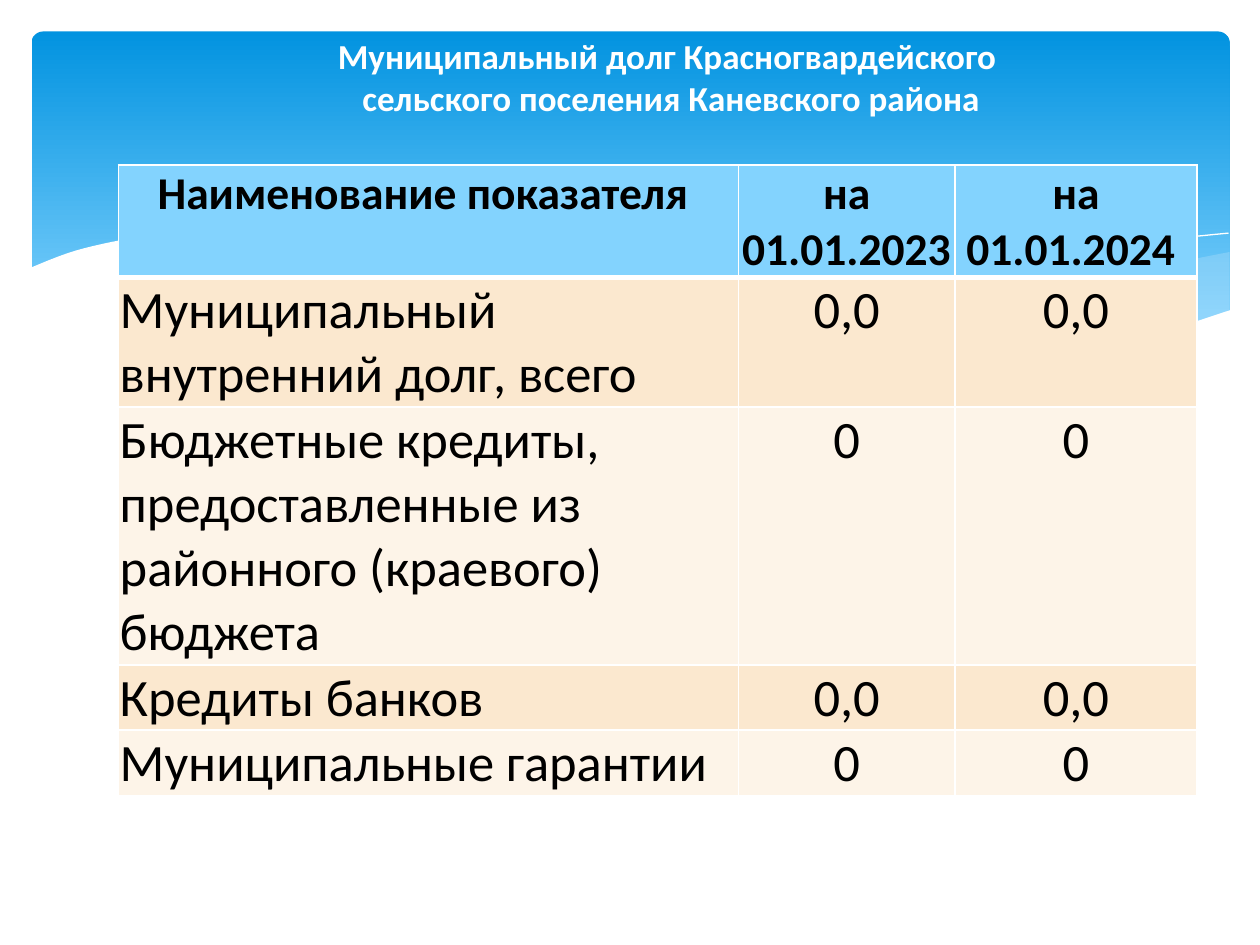
"""Build the slide on the municipal debt of the Krasnogvardeyskoye settlement."""
import lxml.etree
import pptx
import pptx.dml.color
import pptx.enum.shapes
import pptx.enum.text
import pptx.oxml.ns
import pptx.util

Inches = pptx.util.Inches
Pt = pptx.util.Pt
qn = pptx.oxml.ns.qn
CENTER = pptx.enum.text.PP_ALIGN.CENTER
COLORS = {
    "sky": "0293E0", "light_sky": "83D3FE", "wave": "C6E7FC", "white": "FFFFFF",
    "black": "000000", "peach": "FBE8CF", "cream": "FDF4E8",
}
FONT = "Calibri"
TITLE_SIZE, HEADER_SIZE, BODY_SIZE = 20, 26, 30
LINE_SPACING = 1.22
CELL_MARGIN = 0.01
THIN_BORDER, THICK_BORDER = 1, 3
CURVE_STEPS = 8


def rgb(name):
    """Return the named palette colour."""
    return pptx.dml.color.RGBColor.from_string(COLORS[name])


def smooth_curve(knots):
    """Return points of a Catmull-Rom spline that passes through the knots."""
    padded = [knots[0], *knots, knots[-1]]
    points = [knots[0]]
    for before, start, end, after in zip(padded, padded[1:], padded[2:], padded[3:]):
        for step in range(1, CURVE_STEPS + 1):
            t = step / CURVE_STEPS
            points.append(tuple(
                b + ((c - a) * t + (2 * a - 5 * b + 4 * c - d) * t ** 2
                     + (3 * b - a - 3 * c + d) * t ** 3) / 2
                for a, b, c, d in zip(before, start, end, after)))
    return points


presentation = pptx.Presentation()
presentation.slide_width = Inches(10)
presentation.slide_height = Inches(7.5)
slide = presentation.slides.add_slide(presentation.slide_layouts[5])
shapes = slide.shapes

banner = shapes.add_shape(
    pptx.enum.shapes.MSO_SHAPE.ROUNDED_RECTANGLE,
    Inches(0.25), Inches(0.25), Inches(9.51), Inches(2.7))
banner.adjustments[0] = 0.034
banner.shadow.inherit = False
banner.line.fill.background()
banner.fill.gradient()
banner.fill.gradient_angle = 270
for stop, color, position in zip(banner.fill.gradient_stops, ("sky", "light_sky"), (0, 0.9)):
    stop.color.rgb = rgb(color)
    stop.position = position

right_wave_top = [(9.76, 2), (8.61, 2.23), (7.53, 2.48), (6.61, 2.65)]
right_wave_bottom = [(6.61, 2.65), (7.32, 2.74), (8.14, 2.78), (8.97, 2.7), (9.76, 2.47)]
middle_wave_top = [
    (8.93, 2.73), (7.75, 2.54), (6.29, 2.22), (5.28, 2), (4.2, 1.87), (3.44, 1.86), (2.86, 1.91)]
middle_wave_bottom = [
    (2.86, 1.91), (3.83, 2.07), (4.91, 2.32), (6.01, 2.55), (7.09, 2.72), (8.07, 2.78), (8.93, 2.73)]
long_crest = [(3.09, 1.95), (4.01, 1.87), (5.1, 1.92), (6.36, 2.08), (7.6, 2.33), (9.07, 2.72)]
right_crest = [(6.13, 2.57), (7.2, 2.29), (8.36, 2.04), (9.1, 1.92), (9.75, 1.85)]
white_wave_top = [
    (9.77, 2.46), (8.99, 2.69), (8.09, 2.77), (7.08, 2.7), (5.79, 2.5), (4.47, 2.2),
    (3.4, 1.97), (2.3, 1.85), (1.32, 1.86), (0.67, 1.97), (0.23, 2.13)]
white_wave_base = [(0.23, 3.29), (9.77, 3.29)]

filled_waves = [
    ([right_wave_top, right_wave_bottom], "wave", 29),
    ([middle_wave_top, middle_wave_bottom], "wave", 40),
]
crest_lines = [([long_crest], None, 100), ([right_crest], None, 100)]
front_wave = [([white_wave_top, white_wave_base], "white", 100)]
for edges, fill_name, opacity in filled_waves + crest_lines + front_wave:
    outline = [(Inches(x), Inches(y)) for edge in edges for x, y in smooth_curve(edge)]
    builder = shapes.build_freeform(*outline[0])
    builder.add_line_segments(outline[1:], close=fill_name is not None)
    wave = builder.convert_to_shape()
    wave.shadow.inherit = False
    if fill_name is None:
        wave.fill.background()
        wave.line.color.rgb = rgb("white")
        wave.line.width = Pt(0)
        continue
    wave.line.fill.background()
    wave.fill.solid()
    wave.fill.fore_color.rgb = rgb(fill_name)
    if opacity < 100:
        fill_color = wave.element.spPr.find(".//" + qn("a:srgbClr"))
        lxml.etree.SubElement(fill_color, qn("a:alpha"), val=str(opacity * 1000))

header = ("Наименование показателя ", "на 01.01.2023 ", "на 01.01.2024 ")
debt_rows = [
    ("Муниципальный внутренний долг, всего", "0,0", "0,0"),
    ("Бюджетные кредиты, предоставленные из районного (краевого) бюджета", "0", "0"),
    ("Кредиты банков", "0,0", "0,0"),
    ("Муниципальные гарантии", "0", "0"),
]
rows = [header, *debt_rows]
column_widths = [4.92, 1.72, 1.92]
lines_per_row = [2, 2, 4, 1, 1]
font_sizes = [HEADER_SIZE] + [BODY_SIZE] * len(debt_rows)
row_heights = [
    lines * size * LINE_SPACING / 72 + CELL_MARGIN
    for lines, size in zip(lines_per_row, font_sizes)]

table = shapes.add_table(
    len(rows), len(column_widths), Inches(0.94), Inches(1.31),
    Inches(sum(column_widths)), Inches(sum(row_heights))).table
table.horz_banding = False
for column, width in zip(table.columns, column_widths):
    column.width = Inches(width)
for row_index, (texts, height, size) in enumerate(zip(rows, row_heights, font_sizes)):
    table.rows[row_index].height = Inches(height)
    is_header = row_index == 0
    row_color = "light_sky" if is_header else ("cream", "peach")[row_index % 2]
    for column_index, text in enumerate(texts):
        cell = table.cell(row_index, column_index)
        cell.text = text
        cell.margin_left = cell.margin_right = cell.margin_top = Inches(CELL_MARGIN)
        cell.margin_bottom = 0
        for side in ("lnL", "lnR", "lnT", "lnB"):
            under_header = (row_index, side) in ((0, "lnB"), (1, "lnT"))
            border_width = Pt(THICK_BORDER if under_header else THIN_BORDER)
            border = lxml.etree.SubElement(
                cell._tc.get_or_add_tcPr(), qn("a:" + side), w=str(border_width))
            border_fill = lxml.etree.SubElement(border, qn("a:solidFill"))
            lxml.etree.SubElement(border_fill, qn("a:srgbClr"), val=COLORS["white"])
        cell.fill.solid()
        cell.fill.fore_color.rgb = rgb(row_color)
        paragraph = cell.text_frame.paragraphs[0]
        if is_header or column_index > 0:
            paragraph.alignment = CENTER
        paragraph.font.name = FONT
        paragraph.font.size = Pt(size)
        paragraph.font.bold = is_header
        paragraph.font.color.rgb = rgb("black")

title = shapes.title
title.left, title.top = Inches(1.09), Inches(0.21)
title.width, title.height = Inches(8.41), Inches(0.79)
title.text_frame.text = "Муниципальный долг Красногвардейского\v сельского поселения Каневского района"
title.text_frame.vertical_anchor = pptx.enum.text.MSO_ANCHOR.MIDDLE
heading = title.text_frame.paragraphs[0]
heading.alignment = CENTER
heading.font.name = FONT
heading.font.size = Pt(TITLE_SIZE)
heading.font.bold = True
heading.font.color.rgb = rgb("white")
shapes.element.append(title.element)

presentation.save("out.pptx")
